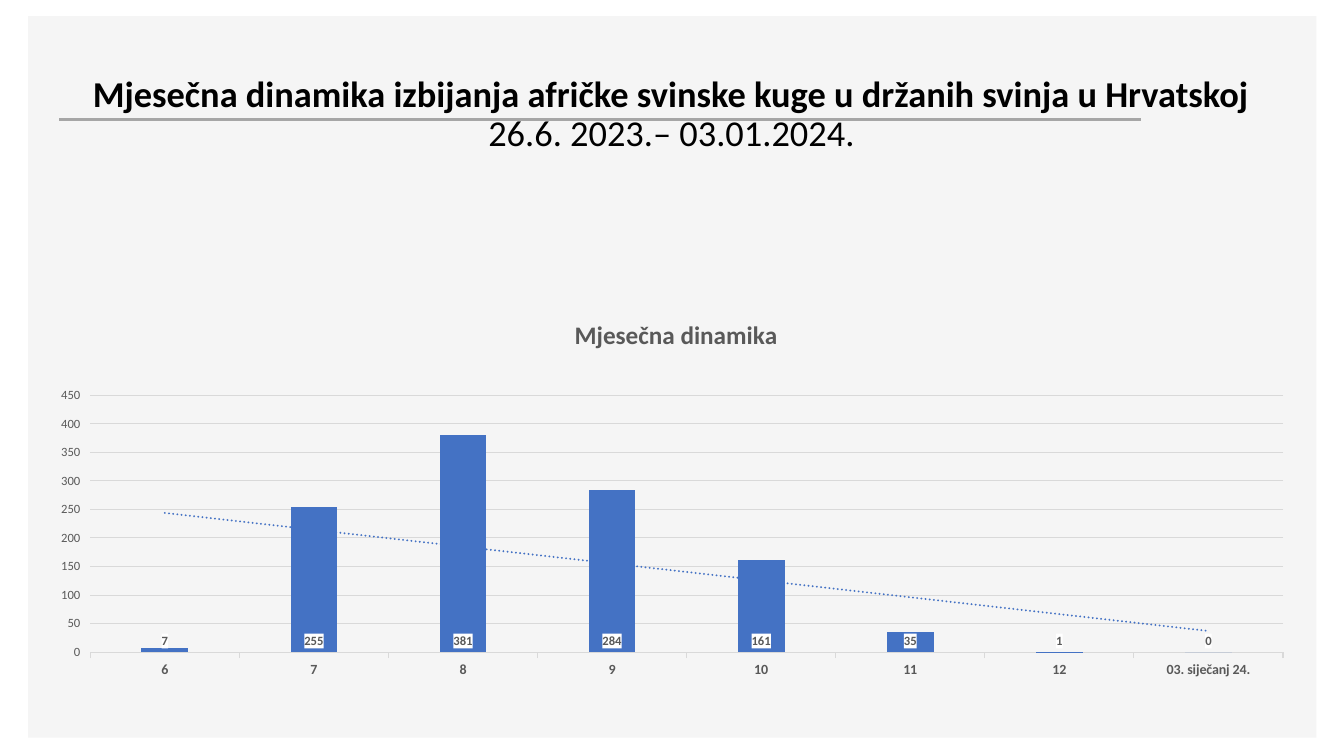
from lxml.etree import SubElement, fromstring
from pptx import Presentation
from pptx.chart.data import CategoryChartData
from pptx.dml.color import RGBColor
from pptx.enum.chart import XL_CHART_TYPE, XL_LABEL_POSITION, XL_TICK_MARK
from pptx.enum.shapes import MSO_CONNECTOR, MSO_SHAPE
from pptx.enum.text import MSO_ANCHOR, MSO_AUTO_SIZE, PP_ALIGN
from pptx.oxml.ns import nsdecls, qn
from pptx.util import Pt

BLUE, GRAY, PALE = "4472C4", "595959", "D9D9D9"


def color(code):
    return RGBColor.from_string(code)


def format_font(font, size, code, bold=False):
    font.name = "Calibri"
    font.size = Pt(size)
    font.bold = bold
    font.color.rgb = color(code)


def write(para, text, **style):
    run = para.add_run()
    run.text = text
    format_font(run.font, **style)


def place(parent, index, **parts):
    for old in parent.findall(qn("c:layout")):
        parent.remove(old)
    layout = fromstring(f"<c:layout {nsdecls('c')}/>")
    manual = SubElement(layout, qn("c:manualLayout"))
    for name, value in parts.items():
        SubElement(manual, qn(f"c:{name}")).set("val", str(value))
    parent.insert(index, layout)


class Slide:
    def __init__(self, deck):
        self.slide = deck.slides.add_slide(deck.slide_layouts[5])
        self.shapes = self.slide.shapes
        self.head = self.shapes.title

    def panel(self, left, top, width, height, fill):
        box = self.shapes.add_shape(
            MSO_SHAPE.RECTANGLE, Pt(left), Pt(top), Pt(width), Pt(height))
        box.shadow.inherit = False
        box.fill.solid()
        box.fill.fore_color.rgb = color(fill)
        box.line.fill.background()
        self.head.element.addprevious(box.element)

    def rule(self, left, right, top, code, width):
        line = self.shapes.add_connector(
            MSO_CONNECTOR.STRAIGHT, Pt(left), Pt(top), Pt(right), Pt(top))
        line.line.color.rgb = color(code)
        line.line.width = Pt(width)
        SubElement(line.element.spPr, qn("a:effectLst"))
        self.head.element.addprevious(line.element)

    def title(self, left, top, width, height, first, second):
        head = self.head
        head.left, head.top = Pt(left), Pt(top)
        head.width, head.height = Pt(width), Pt(height)
        frame = head.text_frame
        frame.word_wrap = True
        frame.auto_size = MSO_AUTO_SIZE.NONE
        frame.vertical_anchor = MSO_ANCHOR.MIDDLE
        para = frame.paragraphs[0]
        para.alignment = PP_ALIGN.CENTER
        para.line_spacing = 0.9
        write(para, first, size=26, code="000000", bold=True)
        para.add_line_break()
        write(para, second, size=26, code="000000")

    def chart(self, left, top, width, height, name, values):
        data = CategoryChartData()
        data.categories = list(values)
        data.add_series("Series 1", list(values.values()))
        chart = self.shapes.add_chart(
            XL_CHART_TYPE.COLUMN_CLUSTERED,
            Pt(left), Pt(top), Pt(width), Pt(height), data).chart
        format_font(chart.font, 10, "000000")
        chart.has_legend = False
        chart.has_title = True
        write(chart.chart_title.text_frame.paragraphs[0], name,
              size=18, code=GRAY, bold=True)
        root = chart.element
        place(root.find(".//" + qn("c:title")), 1, xMode="edge", yMode="edge",
              x=382 / width, y=16 / height)
        place(root.find(".//" + qn("c:plotArea")), 0, layoutTarget="inner",
              xMode="edge", yMode="edge", x=39.3 / width, y=75 / height,
              w=852 / width, h=183.6 / height)
        self.axes(chart.category_axis, chart.value_axis)
        self.bars(chart.plots[0])
        self.trend(root.find(".//" + qn("c:ser")).find(qn("c:dLbls")))

    def axes(self, months, scale):
        format_font(months.tick_labels.font, 10, GRAY, True)
        format_font(scale.tick_labels.font, 9, GRAY)
        months.major_tick_mark = scale.major_tick_mark = XL_TICK_MARK.OUTSIDE
        scale.minimum_scale, scale.maximum_scale = 0, 450
        scale.major_unit = 50
        scale.format.line.fill.background()
        scale.has_major_gridlines = True
        for line in (months.format.line, scale.major_gridlines.format.line):
            line.color.rgb = color(PALE)
            line.width = Pt(0.75)

    def bars(self, plot):
        plot.vary_by_categories = False
        plot.gap_width, plot.overlap = 219, -27
        bars = plot.series[0]
        bars.format.fill.solid()
        bars.format.fill.fore_color.rgb = color(BLUE)
        bars.invert_if_negative = False
        labels = bars.data_labels
        labels.show_value = True
        labels.position = XL_LABEL_POSITION.INSIDE_BASE
        format_font(labels.font, 9, GRAY, True)

    def trend(self, labels):
        labels.find(qn("c:txPr")).addprevious(fromstring(
            f'<c:spPr {nsdecls("c", "a")}><a:solidFill>'
            '<a:srgbClr val="FFFFFF"/></a:solidFill></c:spPr>'))
        labels.addnext(fromstring(
            f'<c:trendline {nsdecls("c", "a")}><c:spPr>'
            f'<a:ln w="{Pt(1.5)}" cap="rnd"><a:solidFill>'
            f'<a:srgbClr val="{BLUE}"/></a:solidFill>'
            '<a:prstDash val="sysDot"/></a:ln></c:spPr>'
            '<c:trendlineType val="linear"/><c:dispRSqr val="0"/>'
            '<c:dispEq val="0"/></c:trendline>'))


def main():
    deck = Presentation()
    deck.slide_width, deck.slide_height = Pt(960), Pt(540)
    page = Slide(deck)
    page.panel(20.16, 11.52, 920.16, 515.52, "F5F5F5")
    page.rule(42.48, 815.04, 85.4, "A6A6A6", 2.25)
    page.title(50.4, 33.12, 858.96, 98.64,
               "Mjesečna dinamika izbijanja afričke svinske kuge "
               "u držanih svinja u Hrvatskoj",
               "26.6. 2023.– 03.01.2024.")
    page.chart(25.2, 207.36, 909.36, 282.24, "Mjesečna dinamika", {
        "6": 7, "7": 255, "8": 381, "9": 284, "10": 161, "11": 35,
        "12": 1, "03. siječanj 24.": 0})
    deck.save("out.pptx")


if __name__ == "__main__":
    main()
